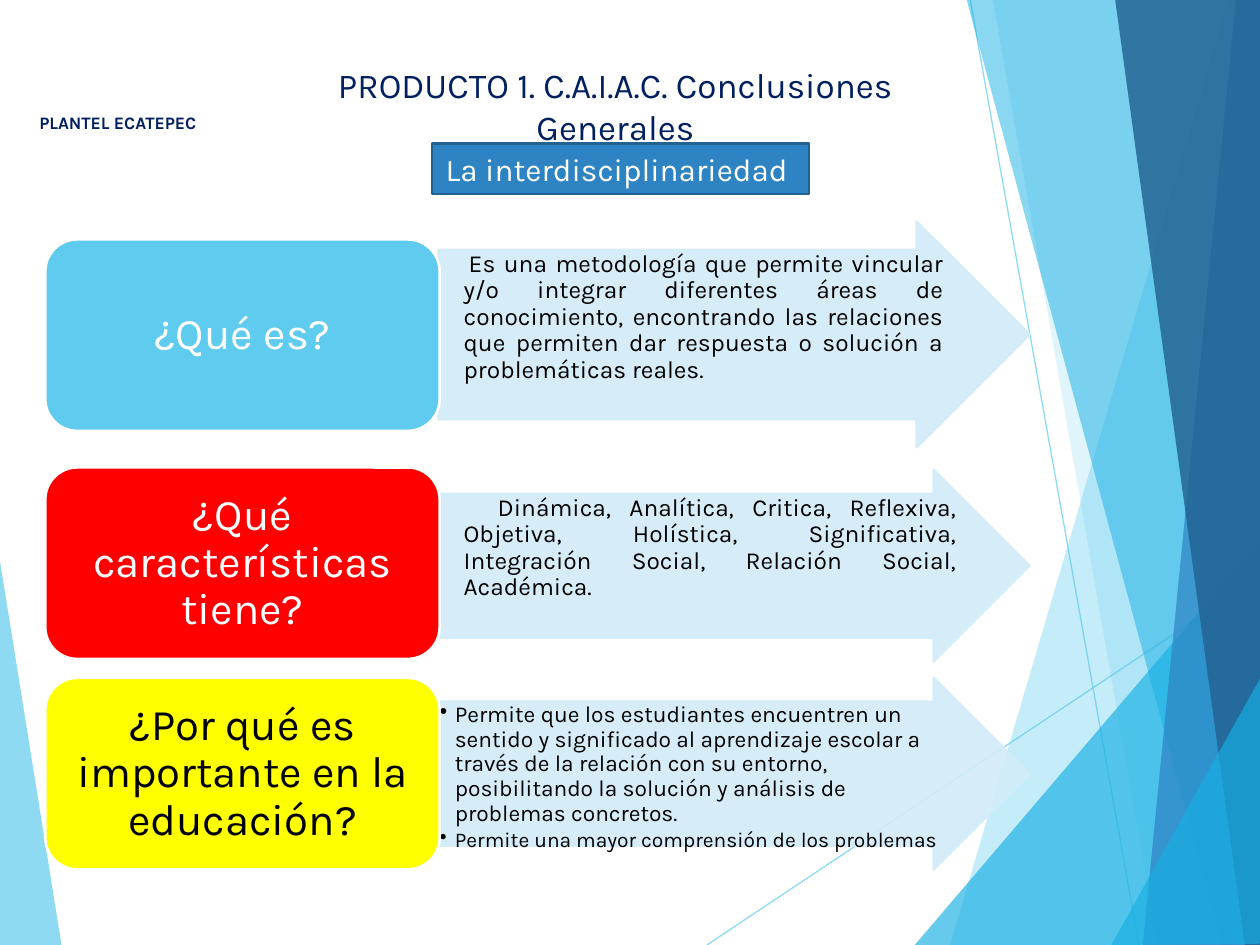
from dataclasses import dataclass

from lxml.etree import SubElement
from pptx import Presentation
from pptx.dml.color import RGBColor
from pptx.enum.shapes import MSO_CONNECTOR, MSO_SHAPE
from pptx.enum.text import MSO_ANCHOR, PP_ALIGN
from pptx.oxml.ns import qn
from pptx.util import Inches, Pt


@dataclass(frozen=True)
class Theme:
    font: str = "Karla"
    navy: str = "002060"
    white: str = "FFFFFF"
    black: str = "000000"
    sky: str = "5FCBEF"
    cyan: str = "17B0E4"
    blue: str = "2E83C3"
    deep: str = "226292"
    edge: str = "226190"
    pale: str = "D2ECF9"
    red: str = "FF0000"
    yellow: str = "FFFF00"
    title: int = 20
    topic: int = 18
    question: int = 25
    answer: int = 14
    campus: int = 10
    outline: float = 1.5


THEME = Theme()

# Outline points in inches, colour, opacity in percent
FACETS_BEHIND = [
    ([(-0.01, 4.39), (0.49, 7.51), (-0.01, 7.5)], THEME.sky, 70),
]
RAYS = [((5.61, 7.5), (10.01, 4.57)), ((7.7, 0), (9.04, 7.5))]
FACETS_FRONT = [
    ([(9.75, 0), (7.54, 7.5), (10.02, 7.51), (10.01, 0.01)], THEME.sky, 36),
    ([(7.88, -0.01), (9.19, 7.5), (10.01, 7.5), (10.01, -0.01)], THEME.sky, 20),
    ([(7.26, 7.5), (10, 4.29), (10.01, 7.5)], THEME.cyan, 66),
    ([(7.67, -0.01), (9.7, 7.5), (10.01, 7.49), (10.01, -0.01)], THEME.cyan, 50),
    ([(9.81, -0.01), (9.07, 7.5), (10.01, 7.5), (10, -0.01)], THEME.blue, 70),
    ([(8.85, -0.01), (9.88, 7.5), (10.02, 7.5), (10, -0.01)], THEME.deep, 82),
    ([(8.82, 7.5), (10.02, 5.35), (10.02, 7.49)], THEME.cyan, 66),
]


@dataclass(frozen=True)
class Answer:
    text: str
    size: int = THEME.answer
    margin: float = 0.19
    indent: float = 0
    bullet: bool = False


@dataclass(frozen=True)
class Row:
    question: str
    fill: str
    ink: str
    box_top: float
    arrow_top: float
    arrow_height: float
    answers: tuple


ROWS = [
    Row("¿Qué es?", THEME.sky, THEME.white, 1.9, 1.76, 1.79, (
        Answer("Es una metodología que permite vincular y/o integrar diferentes "
               "áreas de conocimiento, encontrando las relaciones que permiten dar "
               "respuesta o solución a problemáticas reales.", indent=0.04),)),
    Row("¿Qué características tiene?", THEME.red, THEME.white, 3.71, 3.73, 1.52, (
        Answer("Dinámica, Analítica, Critica, Reflexiva, Objetiva, Holística, "
               "Significativa, Integración Social, Relación Social, Académica.",
               indent=0.27),)),
    Row("¿Por qué es importante en la educación?", THEME.yellow, THEME.black,
        5.38, 5.38, 1.52, (
            Answer("Permite que los estudiantes encuentren un sentido y significado "
                   "al aprendizaje escolar a través de la relación con su entorno, "
                   "posibilitando la solución y análisis de problemas concretos.",
                   13, 0.12, -0.12, True),
            Answer("Permite una mayor comprensión de los problemas",
                   12, 0.12, -0.12, True))),
]


def set_opacity(color_parent, percent):
    for color in color_parent.iter(qn("a:srgbClr")):
        SubElement(color, qn("a:alpha"), val=str(percent * 1000))


def paint(shape, fill, line=None):
    shape.shadow.inherit = False
    shape.fill.solid()
    shape.fill.fore_color.rgb = RGBColor.from_string(fill)
    if line:
        shape.line.color.rgb = RGBColor.from_string(line)
        shape.line.width = Pt(THEME.outline)
    else:
        shape.line.fill.background()


def write(paragraph, text, size, color, align=PP_ALIGN.CENTER, bold=False):
    paragraph.text = text
    paragraph.alignment = align
    paragraph.font.name = THEME.font
    paragraph.font.size = Pt(size)
    paragraph.font.bold = bold
    paragraph.font.color.rgb = RGBColor.from_string(color)


def add_facet(slide, points, color, opacity):
    corners = [(Inches(x), Inches(y)) for x, y in points]
    builder = slide.shapes.build_freeform(*corners[0])
    builder.add_line_segments(corners[1:], close=True)
    facet = builder.convert_to_shape()
    paint(facet, color)
    set_opacity(facet.fill._xPr, opacity)


def add_ray(slide, start, end):
    ray = slide.shapes.add_connector(
        MSO_CONNECTOR.STRAIGHT, *(Inches(value) for value in start + end))
    ray.line.color.rgb = RGBColor.from_string(THEME.sky)
    ray.line.width = Pt(0.75)
    properties = ray._element.spPr
    set_opacity(properties, 70)
    SubElement(properties, qn("a:effectLst"))


def add_background(slide):
    for facet in FACETS_BEHIND:
        add_facet(slide, *facet)
    for ray in RAYS:
        add_ray(slide, *ray)
    for facet in FACETS_FRONT:
        add_facet(slide, *facet)


def add_title(slide):
    title = slide.shapes.title
    title.left, title.top = Inches(2.01), Inches(0.44)
    title.width, title.height = Inches(5.75), Inches(0.8)
    title.text_frame.vertical_anchor = MSO_ANCHOR.MIDDLE
    write(title.text_frame.paragraphs[0],
          "PRODUCTO 1. C.A.I.A.C. Conclusiones Generales", THEME.title, THEME.navy)


def add_answer_arrow(slide, row):
    arrow = slide.shapes.add_shape(
        MSO_SHAPE.RIGHT_ARROW, Inches(3.48), Inches(row.arrow_top),
        Inches(4.69), Inches(row.arrow_height))
    arrow.adjustments[0], arrow.adjustments[1] = 0.75, 0.5
    paint(arrow, THEME.pale, THEME.pale)
    set_opacity(arrow._element.spPr, 90)
    frame = arrow.text_frame
    frame.word_wrap = True
    frame.vertical_anchor = MSO_ANCHOR.TOP
    frame.margin_left = frame.margin_right = Inches(0.01)
    frame.margin_top = frame.margin_bottom = Inches(0.01)
    for index, answer in enumerate(row.answers):
        paragraph = frame.add_paragraph() if index else frame.paragraphs[0]
        align = PP_ALIGN.LEFT if answer.bullet else PP_ALIGN.JUSTIFY
        write(paragraph, answer.text, answer.size, THEME.black, align)
        paragraph.line_spacing = 0.9
        paragraph.space_after = Pt(2)
        properties = paragraph._p.get_or_add_pPr()
        properties.set("marL", str(Inches(answer.margin)))
        properties.set("indent", str(Inches(answer.indent)))
        if answer.bullet:
            bullet = properties.makeelement(qn("a:buChar"), {"char": "•"})
            properties.find(qn("a:defRPr")).addprevious(bullet)


def add_question_box(slide, row):
    box = slide.shapes.add_shape(
        MSO_SHAPE.ROUNDED_RECTANGLE, Inches(0.36), Inches(row.box_top),
        Inches(3.13), Inches(1.52))
    paint(box, row.fill, THEME.white)
    box.text_frame.word_wrap = True
    question = box.text_frame.paragraphs[0]
    write(question, row.question, THEME.question, row.ink)
    question.line_spacing = 0.9


def add_topic(slide):
    topic = slide.shapes.add_shape(
        MSO_SHAPE.RECTANGLE, Inches(3.43), Inches(1.14), Inches(2.99), Inches(0.4))
    paint(topic, THEME.blue, THEME.edge)
    write(topic.text_frame.paragraphs[0], "La interdisciplinariedad ",
          THEME.topic, THEME.white)


def add_campus(slide):
    campus = slide.shapes.add_textbox(
        Inches(0.1), Inches(0.84), Inches(1.67), Inches(0.28))
    campus.text_frame.word_wrap = True
    write(campus.text_frame.paragraphs[0], "PLANTEL ECATEPEC",
          THEME.campus, THEME.navy, bold=True)


def main():
    deck = Presentation()
    deck.slide_width, deck.slide_height = Inches(10), Inches(7.5)
    slide = deck.slides.add_slide(deck.slide_layouts[5])
    add_background(slide)
    add_title(slide)
    for row in ROWS:
        add_answer_arrow(slide, row)
        add_question_box(slide, row)
    add_topic(slide)
    add_campus(slide)
    deck.save("out.pptx")


if __name__ == "__main__":
    main()
